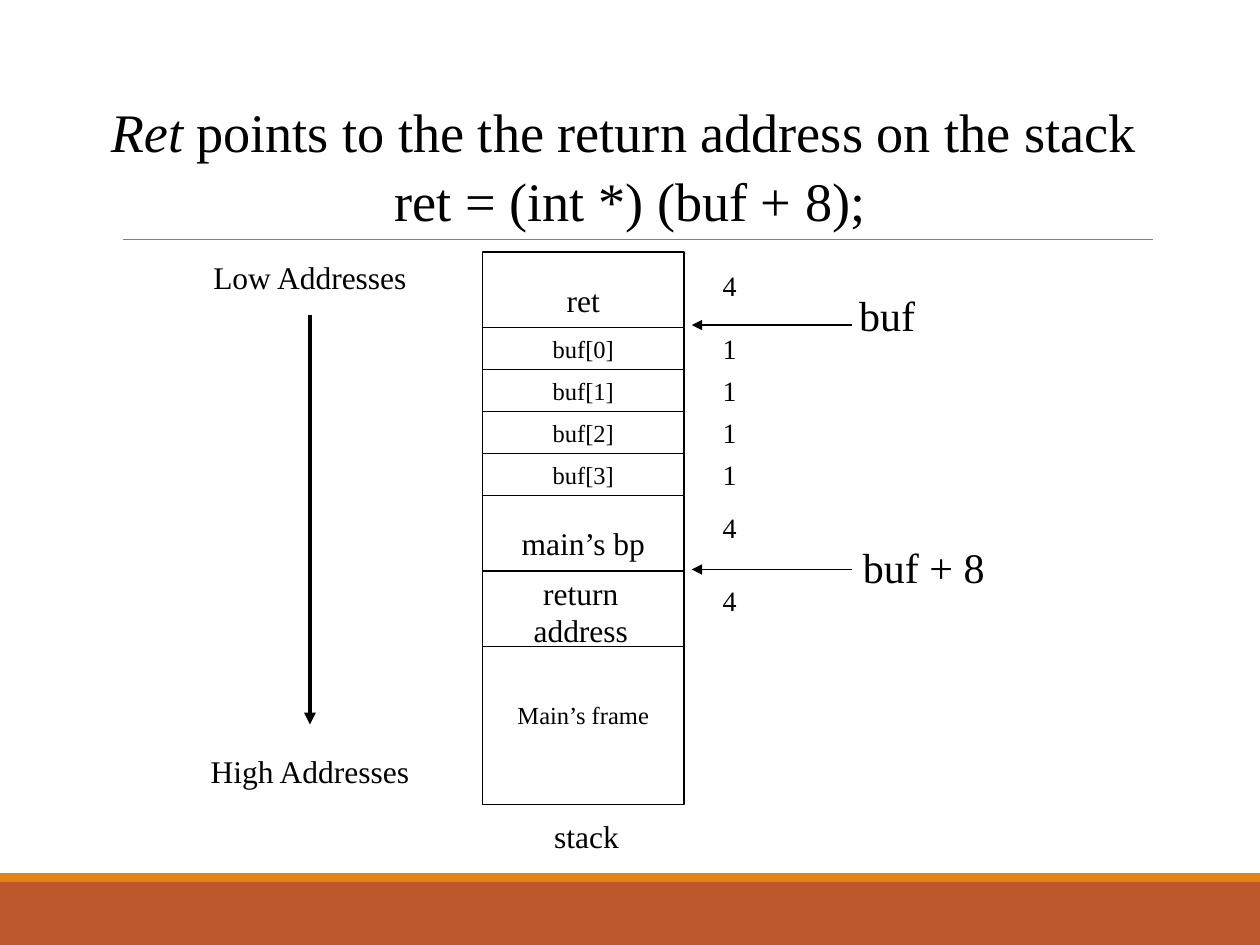
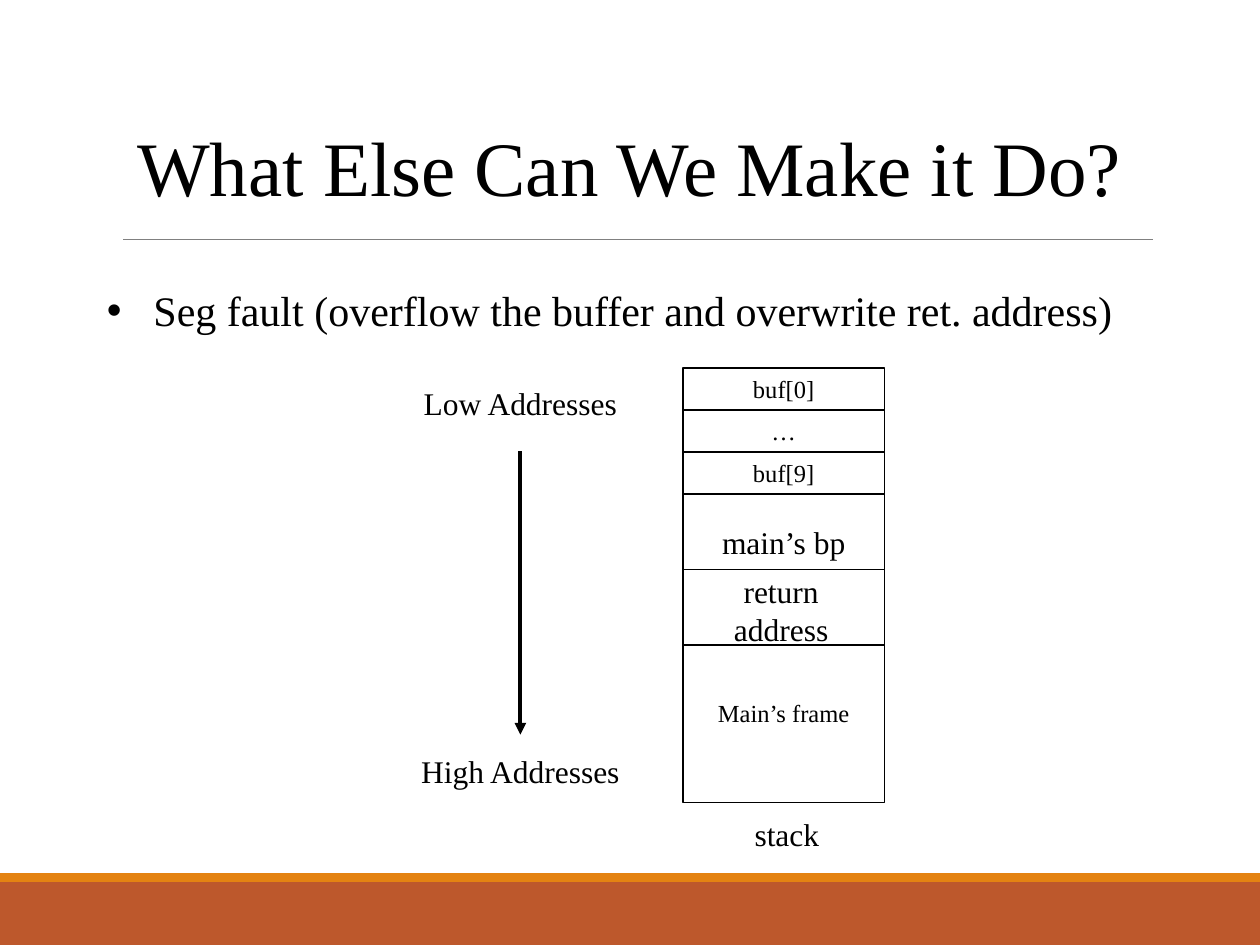
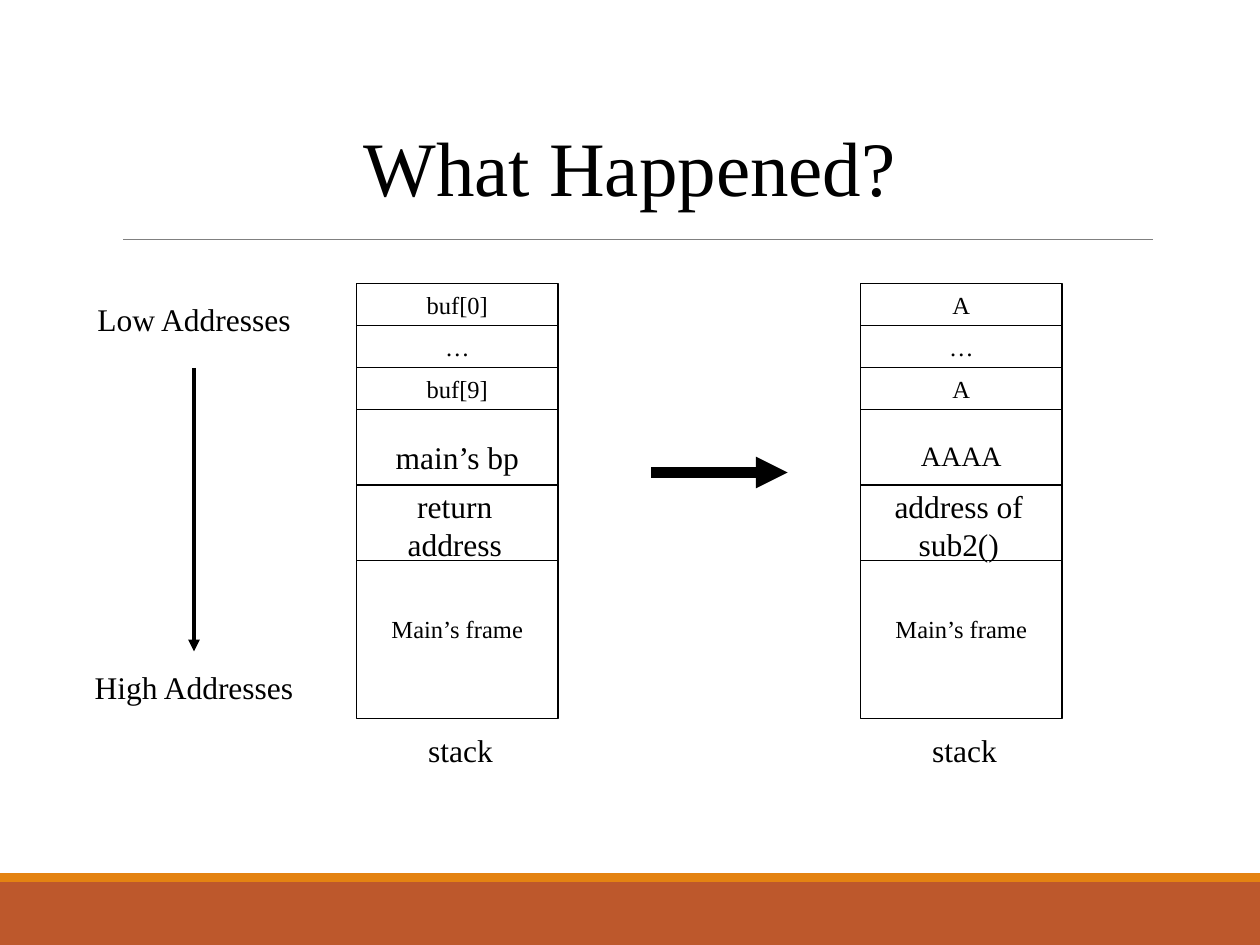
from lxml import etree
from pptx import Presentation
from pptx import util as u
from pptx.dml import color as c
from pptx.enum import shapes, text
from pptx.oxml import ns

HUES = {"ink": "000000", "rule": "808080", "band": "BD582C", "edge": "E48312"}
FACE = "Times New Roman"
WIDE = 1.6
KINDS = {
    "word": (0.6, 0.1, 0.18, 18),
    "fill": (0.6, 0.1, 0.18, 16),
    "byte": (1 / 3, 0.1, 0, 14),
    "addr": (0.6, 0.08, -0.03, 18),
    "frame": (1.25, 0.1, 0.37, 14),
}


def hue(name):
    return c.RGBColor.from_string(HUES[name])


def inches(*sizes):
    return [u.Inches(size) for size in sizes]


def style(para, size):
    for run in para.runs:
        run.font.name = FACE
        run.font.size = u.Pt(size)
        run.font.color.rgb = hue("ink")


def label(slide, words, x, y, w, size, lines=1, left=False):
    high = 0.1 + lines * size / 60
    frame = slide.shapes.add_textbox(*inches(x, y, w, high)).text_frame
    frame.word_wrap = True
    para = frame.paragraphs[0]
    para.text = words
    para.alignment = text.PP_ALIGN.LEFT if left else text.PP_ALIGN.CENTER
    style(para, size)


def box(slide, x, y, w, h, fill=None):
    shape = slide.shapes.add_shape(shapes.MSO_SHAPE.RECTANGLE, *inches(x, y, w, h))
    shape.shadow.inherit = False
    if fill:
        shape.fill.solid()
        shape.fill.fore_color.rgb = hue(fill)
        shape.line.fill.background()
    else:
        shape.fill.background()
        shape.line.color.rgb = hue("ink")
        shape.line.width = u.Pt(0.75)


def line(slide, x1, y1, x2, y2, width, ink="ink", head=True, kind="STRAIGHT"):
    link = slide.shapes.add_connector(
        shapes.MSO_CONNECTOR[kind], *inches(x1, y1, x2, y2))
    link.line.color.rgb = hue(ink)
    link.line.width = u.Pt(width)
    if head:
        etree.SubElement(link.line._get_or_add_ln(), ns.qn("a:tailEnd"), type="triangle")
    etree.SubElement(link._element.spPr, ns.qn("a:effectLst"))


def page(deck, size, *rows, lead=""):
    slide = deck.slides.add_slide(deck.slide_layouts[6])
    line(slide, 0.98, 1.9, 9.15, 1.9, 0.5, "rule", head=False)
    box(slide, 0, 7, 10, 0.5, "band")
    box(slide, 0, 6.93, 10, 0.07, "edge")
    frame = slide.shapes.add_textbox(*inches(0.75, 0.67, 8.5, 1.25)).text_frame
    frame.word_wrap = True
    frame.vertical_anchor = text.MSO_ANCHOR.MIDDLE
    para = frame.paragraphs[0]
    para.alignment = text.PP_ALIGN.CENTER
    para.line_spacing = 1.06
    if lead:
        run = para.add_run()
        run.text = lead
        run.font.italic = True
    for i, row in enumerate(rows):
        if i:
            para.add_line_break()
        para.add_run().text = row
    style(para, size)
    return slide


def bullet(slide, words, x, y, w, h):
    frame = slide.shapes.add_textbox(*inches(x, y, w, h)).text_frame
    frame.word_wrap = True
    para = frame.paragraphs[0]
    para.text = words
    para.line_spacing = 1.1
    props = para._p.get_or_add_pPr()
    dent = u.Inches(0.37)
    props.set("marL", str(dent))
    props.set("indent", str(-dent))
    etree.SubElement(props, ns.qn("a:buFont"), typeface="Arial")
    etree.SubElement(props, ns.qn("a:buChar"), char="•")
    style(para, 24)


def stack(slide, x, y, cells):
    for kind, words in cells:
        high, dx, dy, size = KINDS[kind]
        box(slide, x, y, WIDE, high)
        label(slide, words, x + dx, y + dy, 1.4, size, 2 if kind == "addr" else 1)
        y += high
    label(slide, "stack", x, y + 0.05, 1.65, 18)


def scale(slide, x, low, start, end, high):
    wide = 2.42
    label(slide, "Low Addresses", x, low, wide, 18)
    line(slide, x + wide / 2, start, x + wide / 2, end, 2.25)
    label(slide, "High Addresses", x, high, wide, 18)


def sizes(slide, x, y):
    marks = [(0.08, "4")]
    marks += [(0.58 + i / 3, "1") for i in range(4)]
    marks += [(2, "4"), (2.58, "4")]
    for dy, mark in marks:
        label(slide, mark, x, y + dy, 0.58, 16)


def bytes_of(*names):
    return [("byte", name) for name in names]


def main():
    deck = Presentation()
    deck.slide_width, deck.slide_height = inches(10, 7.5)
    tail = [("addr", "return address"), ("frame", "Main’s frame")]
    base = [("word", "main’s bp")] + tail
    full = bytes_of("buf[0]", "…", "buf[9]") + base

    slide = page(deck, 31, " points to the the return address on the stack ",
                 "ret = (int *) (buf + 8);", lead="Ret")
    names = [f"buf[{i}]" for i in range(4)]
    stack(slide, 3.83, 2, [("word", "ret")] + bytes_of(*names) + base)
    scale(slide, 1.25, 2, 2.5, 5.75, 5.92)
    sizes(slide, 5.5, 2)
    label(slide, "buf", 6.33, 2.25, 1.42, 24)
    label(slide, "buf + 8", 6.75, 4.25, 1.67, 24, left=True)
    for y in (2.58, 4.52):
        line(slide, 6.76, y, 5.49, y, 0.75)
    line(slide, 3.83, 2.3, 3.83, 4.83, 0.75, head=False, kind="ELBOW")

    slide = page(deck, 44, "What Else Can We Make it Do?")
    bullet(slide, "Seg fault (overflow the buffer and overwrite ret. address)",
           0.75, 2.17, 8.5, 4.5)
    stack(slide, 5.42, 2.92, full)
    scale(slide, 2.92, 3, 3.58, 5.83, 5.92)

    slide = page(deck, 44, "What Happened?")
    stack(slide, 2.83, 2.25, full)
    scale(slide, 0.33, 2.33, 2.92, 5.17, 5.25)
    smash = [("fill", "AAAA"), ("addr", "address of sub2()"), tail[1]]
    stack(slide, 6.83, 2.25, bytes_of("A", "…", "A") + smash)
    line(slide, 5.17, 3.75, 6.25, 3.75, 6)

    deck.save("out.pptx")


if __name__ == "__main__":
    main()
